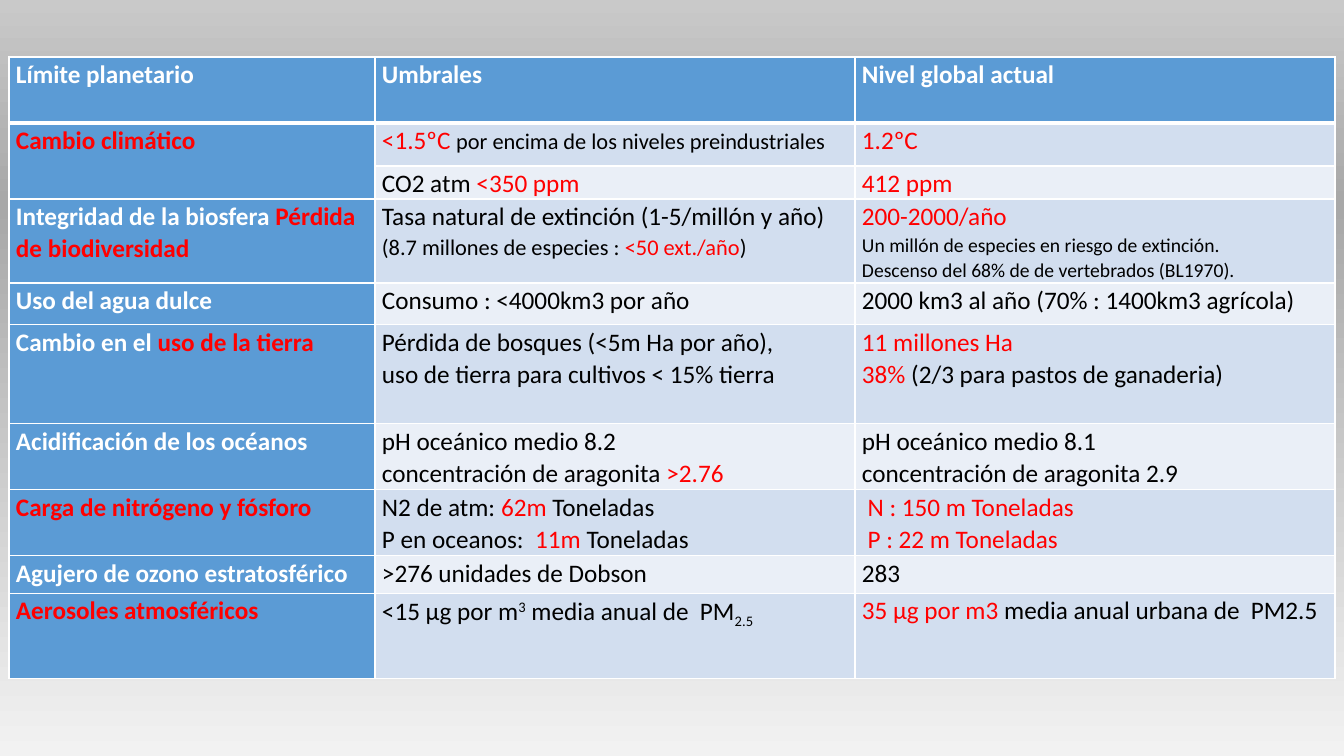
from collections import namedtuple
from copy import deepcopy

from lxml import etree
from pptx import Presentation, util as u
from pptx.dml.color import RGBColor
from pptx.oxml.ns import qn

PX_PER_INCH = 100.8
FONT = "Calibri"
WHITE = RGBColor(0xFF, 0xFF, 0xFF)
BLACK = RGBColor(0, 0, 0)
RED = RGBColor(0xFF, 0, 0)
BLUE = RGBColor(0x5B, 0x9B, 0xD5)
BANDS = (RGBColor(0xD2, 0xDE, 0xEF), RGBColor(0xEA, 0xEF, 0xF7))
BACKGROUND = (
    (0, RGBColor(0xF2, 0xF2, 0xF2)),
    (0.73, RGBColor(0xA8, 0xA8, 0xA8)),
    (1, RGBColor(0xC9, 0xC9, 0xC9)),
)

COLUMN_WIDTHS = (366, 480, 480)
ROW_HEIGHTS = (66, 43, 33, 84, 42, 99, 66, 66, 38, 85)

# A cell is a list of paragraphs, a paragraph is a list of spans.
# A span without a colour takes the colour of its cell.
Span = namedtuple("Span", "text colour size base", defaults=(None, 18, 0))


def red(text, size=18):
    return Span(text, RED, size)


def small(text, size=16):
    return Span(text, None, size)


ROWS = [
    [[[Span("Límite planetario")]],
     [[Span("Umbrales")]],
     [[Span("Nivel global actual")]]],
    [[[red("Cambio climático")]],
     [[red("<1.5ºC "), small("por encima de los niveles preindustriales")]],
     [[red("1.2ºC")]]],
    [[],
     [[Span("CO2 atm "), red("<350 ppm")]],
     [[red("412 ppm")]]],
    [[[Span("Integridad de la biosfera "), red("Pérdida de biodiversidad")]],
     [[Span("Tasa natural de extinción (1-5/millón y año)")],
      [small("(8.7 millones de especies : "), red("<50 ext./año", 16), small(")")]],
     [[red("200-2000/año")],
      [small("Un millón de especies en riesgo de extinción.", 14)],
      [small("Descenso del 68% de de vertebrados (BL1970).", 14)]]],
    [[[Span("Uso del agua dulce")]],
     [[Span("Consumo : <4000km3 por año")]],
     [[Span("2000 km3 al año (70% : 1400km3 agrícola)")]]],
    [[[Span("Cambio en el "), red("uso de la tierra")]],
     [[Span("Pérdida de bosques (<5m Ha por año),")],
      [Span("uso de tierra para cultivos < 15% tierra")]],
     [[red("11 millones Ha")],
      [red("38%"), Span(" (2/3 para pastos de ganaderia)")]]],
    [[[Span("Acidificación de los océanos")]],
     [[Span("pH oceánico medio 8.2")],
      [Span("concentración de aragonita "), red(">2.76")]],
     [[Span("pH oceánico medio 8.1")],
      [Span("concentración de aragonita 2.9")]]],
    [[[red("Carga de nitrógeno y fósforo")]],
     [[Span("N2 de atm: "), red("62m"), Span(" Toneladas")],
      [Span("P en oceanos:  "), red("11m"), Span(" Toneladas")]],
     [[red(" N : 150 m Toneladas")],
      [red(" P : 22 m Toneladas")]]],
    [[[Span("Agujero de ozono estratosférico")]],
     [[Span(">276 unidades de Dobson")]],
     [[Span("283")]]],
    [[[red("Aerosoles atmosféricos")]],
     [[Span("<15 μg por m"), Span("3", base=30),
       Span(" media anual de  PM"), Span("2.5", base=-25)]],
     [[red("35 μg por m3"), Span(" media anual urbana de  PM2.5")]]],
]


def px(length):
    return u.Inches(length / PX_PER_INCH)


def paint_background(page):
    fill = page.background.fill
    fill.gradient()
    fill.gradient_angle = 90
    stop_list = page.element.find(".//" + qn("a:gsLst"))
    stop_list.append(deepcopy(stop_list[0]))
    for stop, (position, colour) in zip(fill.gradient_stops, BACKGROUND):
        stop.position = position
        stop.color.rgb = colour


def add_borders(cell, top, bottom):
    """Draw white borders, 1 pt at the sides; top and bottom are in points."""
    properties = cell._tc.get_or_add_tcPr()
    sides = (("a:lnL", 1), ("a:lnR", 1), ("a:lnT", top), ("a:lnB", bottom))
    for index, (tag, width) in enumerate(sides):
        line = etree.Element(qn(tag), w=str(u.Pt(width)))
        solid = etree.SubElement(line, qn("a:solidFill"))
        etree.SubElement(solid, qn("a:srgbClr"), val=str(WHITE))
        properties.insert(index, line)


def write_cell(cell, paragraphs, colour, bold):
    frame = cell.text_frame
    for number, spans in enumerate(paragraphs):
        para = frame.add_paragraph() if number else frame.paragraphs[0]
        para.line_spacing = 1.07
        for span in spans:
            run = para.add_run()
            run.text = span.text
            font = run.font
            font.name = FONT
            font.size = u.Pt(span.size)
            font.bold = bold
            font.color.rgb = span.colour or colour
            if span.base:
                font._element.set("baseline", str(span.base * 1000))


def style_cell(cell, row, is_heading):
    cell.margin_left = cell.margin_right = px(7)
    cell.margin_top = cell.margin_bottom = 0
    cell.fill.solid()
    cell.fill.fore_color.rgb = BLUE if is_heading else BANDS[(row + 1) % 2]
    add_borders(cell, top=3 if row == 1 else 1, bottom=3 if row == 0 else 1)


def add_limits_table(page):
    frame = page.shapes.add_table(
        len(ROW_HEIGHTS), len(COLUMN_WIDTHS), px(9), px(57),
        px(sum(COLUMN_WIDTHS)), px(sum(ROW_HEIGHTS)))
    table = frame.table
    for column, width in zip(table.columns, COLUMN_WIDTHS):
        column.width = px(width)
    for table_row, height in zip(table.rows, ROW_HEIGHTS):
        table_row.height = px(height)
    for row, contents in enumerate(ROWS):
        for column, paragraphs in enumerate(contents):
            cell = table.cell(row, column)
            is_heading = row == 0 or column == 0
            style_cell(cell, row, is_heading)
            write_cell(cell, paragraphs, WHITE if is_heading else BLACK, is_heading)
    table.cell(1, 0).merge(table.cell(2, 0))


def main():
    deck = Presentation()
    deck.slide_width = px(1344)
    deck.slide_height = px(756)
    page = deck.slides.add_slide(deck.slide_layouts[6])
    paint_background(page)
    add_limits_table(page)
    deck.save("out.pptx")


if __name__ == "__main__":
    main()
